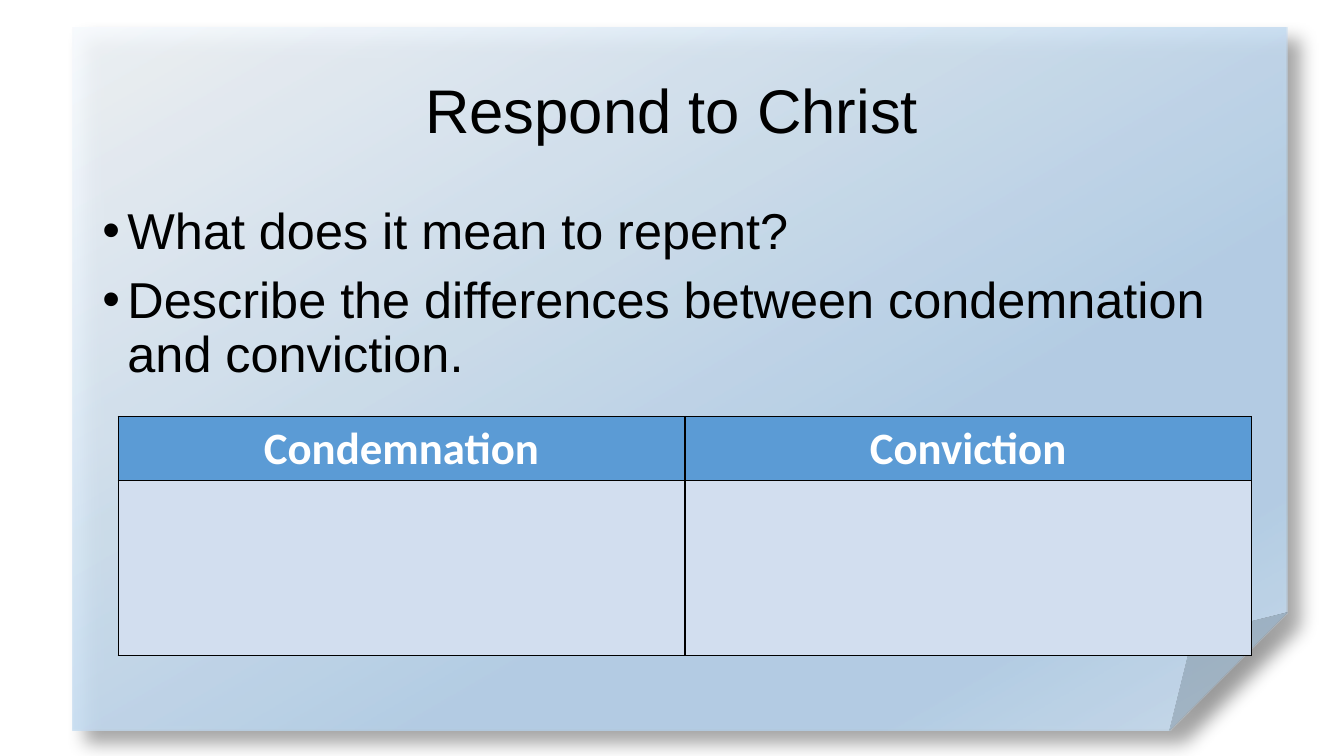
from lxml import etree
from pptx import Presentation
from pptx.dml.color import RGBColor
from pptx.enum.shapes import MSO_SHAPE
from pptx.enum.text import MSO_ANCHOR, PP_ALIGN
from pptx.oxml import parse_xml
from pptx.oxml.ns import nsdecls, qn
from pptx.util import Pt

FOLDED = MSO_SHAPE.FOLDED_CORNER
CENTER = PP_ALIGN.CENTER
MIDDLE = MSO_ANCHOR.MIDDLE

# Content
TITLE = "Respond to Christ"
QUESTIONS = [
    "What does it mean to repent?",
    "Describe the differences between condemnation and conviction.",
]
COMPARISON = [["Condemnation", "Conviction"], ["", ""]]

COLORS = {"text": "000000", "header": "5B9BD5", "body": "D2DEEF",
          "header_text": "FFFFFF", "border": "000000", "shadow": "000000"}
SHEET_STOPS = [(0, "F7FAFD"), (64, "B5D2EC"), (83, "B5D2EC"), (100, "CEE1F2")]
SHEET_ALPHA = 87

# Layout: left, top, width, height in points
SHEET_BOX = (52, 19.5, 867.5, 502)
TITLE_BOX = (66, 28.75, 828, 104.4)
QUESTIONS_BOX = (66, 143.75, 828, 343)
TABLE_LEFT, TABLE_TOP, TABLE_WIDTH = 84.5, 297.5, 809.5
ROW_HEIGHTS = [46, 124.5]


def points(values):
    return [Pt(value) for value in values]


def add_text(paragraph, text, font, size, color, bold=False):
    run = paragraph.add_run()
    run.text = text
    run.font.name = font
    run.font.size = Pt(size)
    run.font.bold = bold
    run.font.color.rgb = RGBColor.from_string(COLORS[color])


def add_bullet(paragraph, indent):
    properties = paragraph._p.get_or_add_pPr()
    properties.set("marL", str(Pt(indent)))
    properties.set("indent", str(-Pt(indent)))
    font = etree.SubElement(properties, qn("a:buFont"))
    font.set("typeface", "Arial")
    etree.SubElement(properties, qn("a:buChar")).set("char", "•")


def add_borders(cell):
    properties = cell._tc.get_or_add_tcPr()
    for side in ("lnL", "lnR", "lnT", "lnB"):
        properties.append(parse_xml(
            f'<a:{side} {nsdecls("a")} w="{Pt(1)}"><a:solidFill>'
            f'<a:srgbClr val="{COLORS["border"]}"/></a:solidFill></a:{side}>'))


def style_sheet(sheet):
    sheet.line.fill.background()
    stops = "".join(
        f'<a:gs pos="{position * 1000}"><a:srgbClr val="{color}">'
        f'<a:alpha val="{SHEET_ALPHA * 1000}"/></a:srgbClr></a:gs>'
        for position, color in SHEET_STOPS)
    gradient = parse_xml(
        f'<a:gradFill {nsdecls("a")} rotWithShape="1"><a:gsLst>{stops}</a:gsLst>'
        f'<a:lin ang="{60 * 60000}" scaled="0"/></a:gradFill>')
    shadow = parse_xml(
        f'<a:effectLst {nsdecls("a")}><a:outerShdw blurRad="{Pt(13)}" '
        f'dist="{Pt(13)}" dir="{45 * 60000}" algn="tl" rotWithShape="0">'
        f'<a:srgbClr val="{COLORS["shadow"]}"><a:alpha val="40000"/></a:srgbClr>'
        '</a:outerShdw></a:effectLst>')
    properties = sheet._element.spPr
    properties.find(qn("a:prstGeom")).addnext(gradient)
    properties.find(qn("a:ln")).addnext(shadow)


presentation = Presentation()
presentation.slide_width, presentation.slide_height = Pt(960), Pt(540)
slide = presentation.slides.add_slide(presentation.slide_layouts[5])
shapes = slide.shapes

# Folded paper sheet, sent to the back
sheet = shapes.add_shape(FOLDED, *points(SHEET_BOX))
style_sheet(sheet)
shapes._spTree.insert(2, sheet._element)

# Title
title = shapes.title
title.left, title.top, title.width, title.height = points(TITLE_BOX)
title.text_frame.vertical_anchor = MIDDLE
heading = title.text_frame.paragraphs[0]
heading.alignment = CENTER
heading.line_spacing = 0.9
add_text(heading, TITLE, "Arial", 44, "text")

# Questions
questions = shapes.add_textbox(*points(QUESTIONS_BOX)).text_frame
questions.word_wrap = True
for index, question in enumerate(QUESTIONS):
    paragraph = questions.add_paragraph() if index else questions.paragraphs[0]
    add_bullet(paragraph, 18)
    paragraph.line_spacing = 0.9
    if index:
        paragraph.space_before = Pt(10)
    add_text(paragraph, question, "Arial", 36, "text")

# Comparison table
table = shapes.add_table(
    len(COMPARISON), len(COMPARISON[0]),
    *points((TABLE_LEFT, TABLE_TOP, TABLE_WIDTH, sum(ROW_HEIGHTS)))).table
for row_index, (labels, height) in enumerate(zip(COMPARISON, ROW_HEIGHTS)):
    table.rows[row_index].height = Pt(height)
    for column_index, label in enumerate(labels):
        cell = table.cell(row_index, column_index)
        add_borders(cell)
        cell.fill.solid()
        fill = COLORS["body" if row_index else "header"]
        cell.fill.fore_color.rgb = RGBColor.from_string(fill)
        if label:
            paragraph = cell.text_frame.paragraphs[0]
            paragraph.alignment = CENTER
            add_text(paragraph, label, "Calibri", 32, "header_text", True)

presentation.save("out.pptx")
